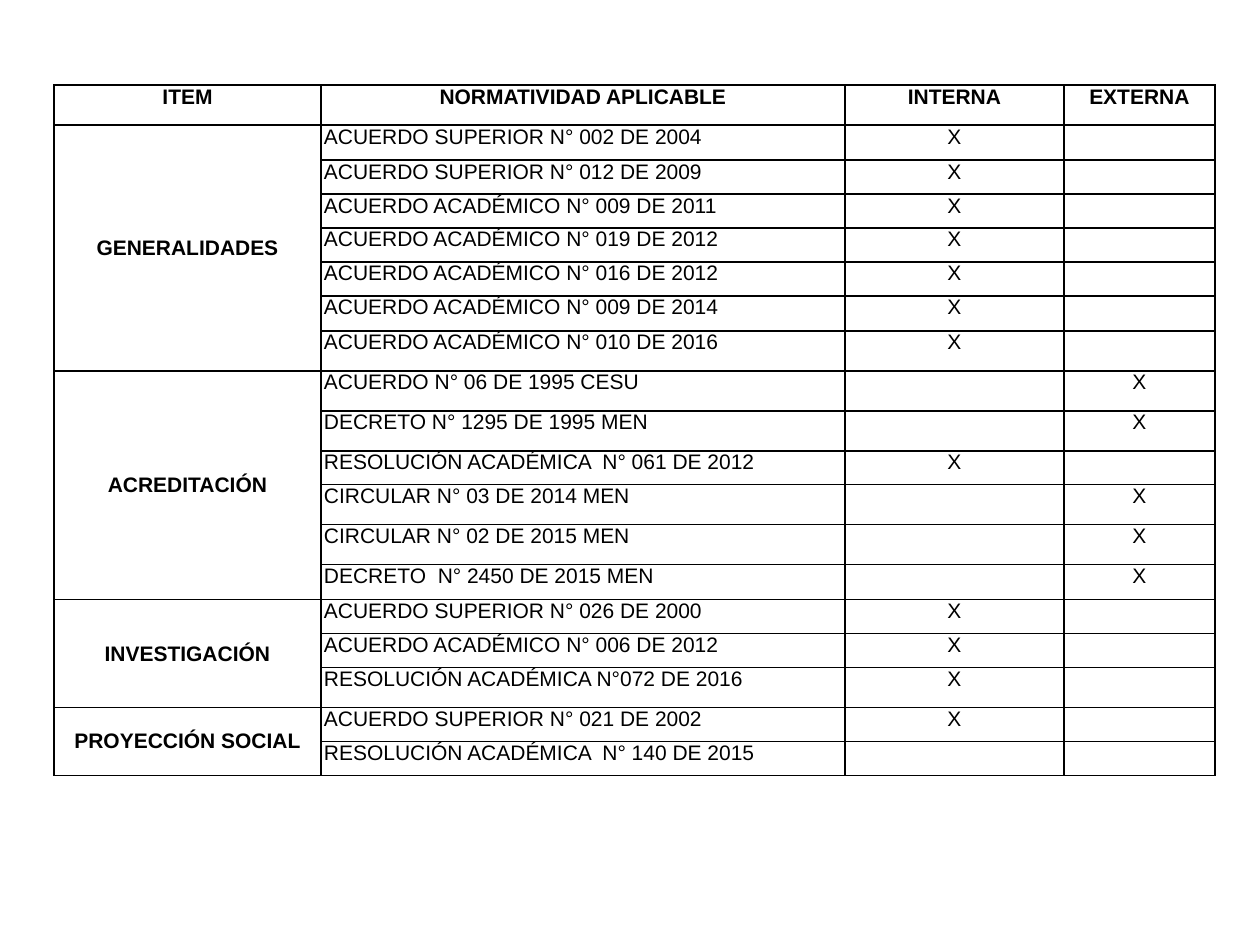
from dataclasses import dataclass
from typing import Optional

from lxml import etree
from pptx import Presentation
from pptx import util as u
from pptx.dml import color
from pptx.enum import text
from pptx.oxml import ns

SCALE = u.Inches(1) / 126
COLORS = {"ink": "000000", "paper": "FFFFFF"}
FONT = {"name": "Arial", "size": u.Pt(12)}
LOW, TALL = 34, 40
INTERNAL, EXTERNAL = 2, 3
HEADINGS = ["ITEM", "NORMATIVIDAD APLICABLE", "INTERNA", "EXTERNA"]
COLUMN_WIDTHS = [267, 524, 219, 151]


@dataclass
class Rule:
    wording: str
    mark_column: Optional[int] = INTERNAL
    height: int = LOW


@dataclass
class Group:
    name: str
    rules: list[Rule]


GROUPS = [
    Group("GENERALIDADES", [
        Rule("ACUERDO SUPERIOR N° 002 DE 2004", height=35),
        Rule("ACUERDO SUPERIOR N° 012 DE 2009"),
        Rule("ACUERDO ACADÉMICO N° 009 DE 2011"),
        Rule("ACUERDO ACADÉMICO N° 019 DE 2012"),
        Rule("ACUERDO ACADÉMICO N° 016 DE 2012"),
        Rule("ACUERDO ACADÉMICO N° 009 DE 2014", height=35),
        Rule("ACUERDO ACADÉMICO N° 010 DE 2016", height=TALL),
    ]),
    Group("ACREDITACIÓN", [
        Rule("ACUERDO N° 06 DE 1995 CESU", EXTERNAL, TALL),
        Rule("DECRETO N° 1295 DE 1995 MEN", EXTERNAL, TALL),
        Rule("RESOLUCIÓN ACADÉMICA  N° 061 DE 2012"),
        Rule("CIRCULAR N° 03 DE 2014 MEN", EXTERNAL, TALL),
        Rule("CIRCULAR N° 02 DE 2015 MEN", EXTERNAL, TALL),
        Rule("DECRETO  N° 2450 DE 2015 MEN", EXTERNAL, 35),
    ]),
    Group("INVESTIGACIÓN", [
        Rule("ACUERDO SUPERIOR N° 026 DE 2000"),
        Rule("ACUERDO ACADÉMICO N° 006 DE 2012"),
        Rule("RESOLUCIÓN ACADÉMICA N°072 DE 2016", height=TALL),
    ]),
    Group("PROYECCIÓN SOCIAL", [
        Rule("ACUERDO SUPERIOR N° 021 DE 2002"),
        Rule("RESOLUCIÓN ACADÉMICA  N° 140 DE 2015", None),
    ]),
]


def px(length: int) -> int:
    return round(length * SCALE)


def apply(target, values: dict) -> None:
    for name, value in values.items():
        setattr(target, name, value)


def add_borders(cell) -> None:
    properties = cell._tc.get_or_add_tcPr()
    for position, side in enumerate(("lnL", "lnR", "lnT", "lnB")):
        line = etree.Element(ns.qn(f"a:{side}"), w=str(u.Pt(1)))
        fill = etree.SubElement(line, ns.qn("a:solidFill"))
        etree.SubElement(fill, ns.qn("a:srgbClr"), val=COLORS["ink"])
        properties.insert(position, line)


def format_cell(cell) -> None:
    apply(cell, {"margin_left": px(3), "margin_right": px(3), "margin_top": 0, "margin_bottom": 0})
    cell.fill.solid()
    cell.fill.fore_color.rgb = color.RGBColor.from_string(COLORS["paper"])
    add_borders(cell)
    end = etree.SubElement(cell.text_frame.paragraphs[0]._p, ns.qn("a:endParaRPr"))
    end.set("sz", str(int(FONT["size"].pt * 100)))


def write_cell(cell, wording: str, bold: bool = False, centered: bool = True) -> None:
    para = cell.text_frame.paragraphs[0]
    para.alignment = text.PP_ALIGN.CENTER if centered else text.PP_ALIGN.LEFT
    span = para.add_run()
    span.text = wording
    apply(span.font, {**FONT, "bold": bold})
    span.font.color.rgb = color.RGBColor.from_string(COLORS["ink"])


def fill_group(table, first_row: int, group: Group) -> int:
    next_row = first_row + len(group.rules)
    heading = table.cell(first_row, 0)
    heading.merge(table.cell(next_row - 1, 0))
    heading.vertical_anchor = text.MSO_ANCHOR.MIDDLE
    write_cell(heading, group.name, bold=True)
    for row, rule in enumerate(group.rules, first_row):
        write_cell(table.cell(row, 1), rule.wording, centered=False)
        if rule.mark_column is not None:
            write_cell(table.cell(row, rule.mark_column), "X")
    return next_row


def add_regulations(page) -> None:
    heights = [TALL] + [rule.height for group in GROUPS for rule in group.rules]
    frame = page.shapes.add_table(
        len(heights), len(COLUMN_WIDTHS), px(54), px(85), px(sum(COLUMN_WIDTHS)), px(sum(heights)))
    table = frame.table
    apply(table, {"first_row": False, "horz_banding": False})
    for column, width in zip(table.columns, COLUMN_WIDTHS):
        column.width = px(width)
    for row, height in zip(table.rows, heights):
        row.height = px(height)
    for cell in table.iter_cells():
        format_cell(cell)
    for column, heading in enumerate(HEADINGS):
        write_cell(table.cell(0, column), heading, bold=True)
    row = 1
    for group in GROUPS:
        row = fill_group(table, row, group)


def main() -> None:
    deck = Presentation()
    apply(deck, {"slide_width": px(1260), "slide_height": px(945)})
    page = deck.slides.add_slide(deck.slide_layouts[6])
    add_regulations(page)
    deck.save("out.pptx")


if __name__ == "__main__":
    main()
